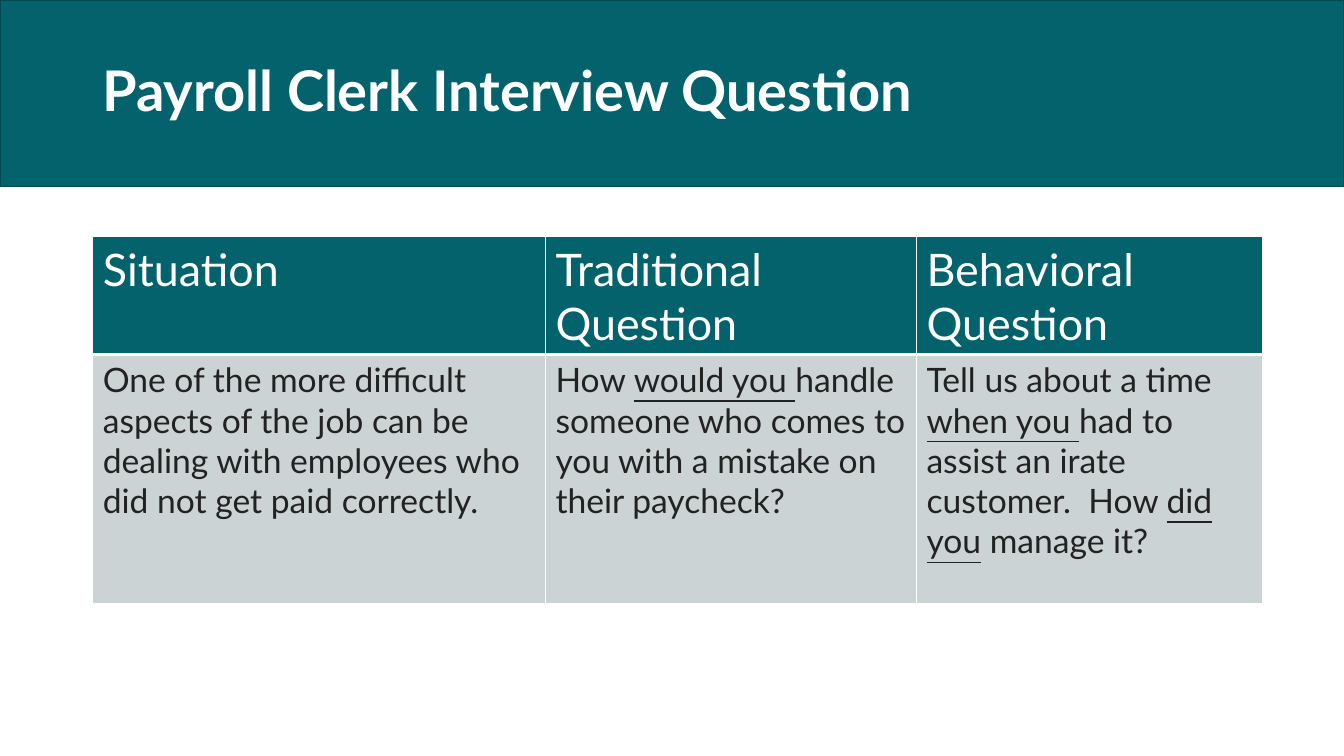
from dataclasses import dataclass

from lxml import etree
from pptx import Presentation
from pptx.dml.color import RGBColor as RGB
from pptx.enum.shapes import MSO_SHAPE as SHAPE
from pptx.enum.text import MSO_ANCHOR as ANCHOR
from pptx.oxml import parse_xml
from pptx.oxml.ns import nsdecls, qn
from pptx.util import Inches, Pt


@dataclass(frozen=True)
class Theme:
    font: str = "Lato"
    teal: str = "03626B"
    outline: str = "02494F"
    white: str = "FFFFFF"
    ink: str = "222222"
    gray: str = "CCD3D4"
    title: int = 40
    header: int = 32
    body: int = 24


class Deck:
    """Holds the theme and the slide being built."""

    def __init__(self, slide, theme):
        self.s, self.theme = slide, theme

    def add_runs(self, p, runs, size, color, bold=False):
        """Fill a paragraph from (text, underlined) pairs."""
        for text, underline in runs:
            r = p.add_run()
            r.text = text
            formats = {"name": self.theme.font, "size": Pt(size),
                       "bold": bold, "underline": underline}
            for name, value in formats.items():
                setattr(r.font, name, value)
            r.font.color.rgb = RGB.from_string(color)

    def band(self, *box):
        sp = self.s.shapes.add_shape(SHAPE.RECTANGLE, *map(Inches, box))
        sp.shadow.inherit = False
        sp.fill.solid()
        sp.fill.fore_color.rgb = RGB.from_string(self.theme.teal)
        sp.line.color.rgb = RGB.from_string(self.theme.outline)
        sp.line.width = Pt(1)

    def title(self, text, *box):
        tf = self.s.shapes.add_textbox(*map(Inches, box)).text_frame
        tf.word_wrap = True
        tf.vertical_anchor = ANCHOR.MIDDLE
        p = tf.paragraphs[0]
        p.line_spacing = 0.9
        self.add_runs(p, [(text, False)], self.theme.title, self.theme.white, bold=True)

    def borders(self, cell, bottom):
        tc_pr = cell._tc.get_or_add_tcPr()
        for side, width in {"L": 1, "R": 1, "T": 1, "B": bottom}.items():
            ln = parse_xml(f'<a:ln{side} {nsdecls("a")} w="{Pt(width)}"/>')
            fill = etree.SubElement(ln, qn("a:solidFill"))
            etree.SubElement(fill, qn("a:srgbClr"), val=self.theme.white)
            tc_pr.append(ln)

    def cell(self, cell, paragraphs, size, color, fill, bottom):
        self.borders(cell, bottom)
        cell.fill.solid()
        cell.fill.fore_color.rgb = RGB.from_string(fill)
        tf = cell.text_frame
        for i, runs in enumerate(paragraphs):
            p = tf.add_paragraph() if i else tf.paragraphs[0]
            self.add_runs(p, runs, size, color)

    def table(self, left, top, widths, heights, header, body):
        box = map(Inches, (left, top, sum(widths), sum(heights)))
        table = self.s.shapes.add_table(2, len(widths), *box).table
        for column, width in zip(table.columns, widths):
            column.width = Inches(width)
        for row, height in zip(table.rows, heights):
            row.height = Inches(height)
        t = self.theme
        styles = ((t.header, t.white, t.teal, 3), (t.body, t.ink, t.gray, 1))
        for row, contents, style in zip(table.rows, (header, body), styles):
            for cell, paragraphs in zip(row.cells, contents):
                self.cell(cell, paragraphs, *style)


HEADER = [
    [[("Situation", False)]],
    [[("Traditional", False)], [("Question", False)]],
    [[("Behavioral Question", False)]],
]
BODY = [
    [[("One of the more difficult aspects of the job can be dealing with "
       "employees who did not get paid correctly.", False)]],
    [[("How ", False), ("would you ", True),
      ("handle someone who comes to you with a mistake on their paycheck?", False)]],
    [[("Tell us about a time ", False), ("when you ", True),
      ("had to assist an irate customer.  How ", False),
      ("did you", True), (" manage it?", False)]],
]


def main():
    prs = Presentation()
    prs.slide_width, prs.slide_height = Inches(13.33), Inches(7.5)
    deck = Deck(prs.slides.add_slide(prs.slide_layouts[6]), Theme())
    deck.band(0, 0, 13.33, 1.85)
    deck.title("Payroll Clerk Interview Question", 0.92, 0.2, 11.5, 1.45)
    deck.table(0.92, 2.35, (4.49, 3.68, 3.43), (1.08, 2.47), HEADER, BODY)
    prs.save("out.pptx")


if __name__ == "__main__":
    main()
